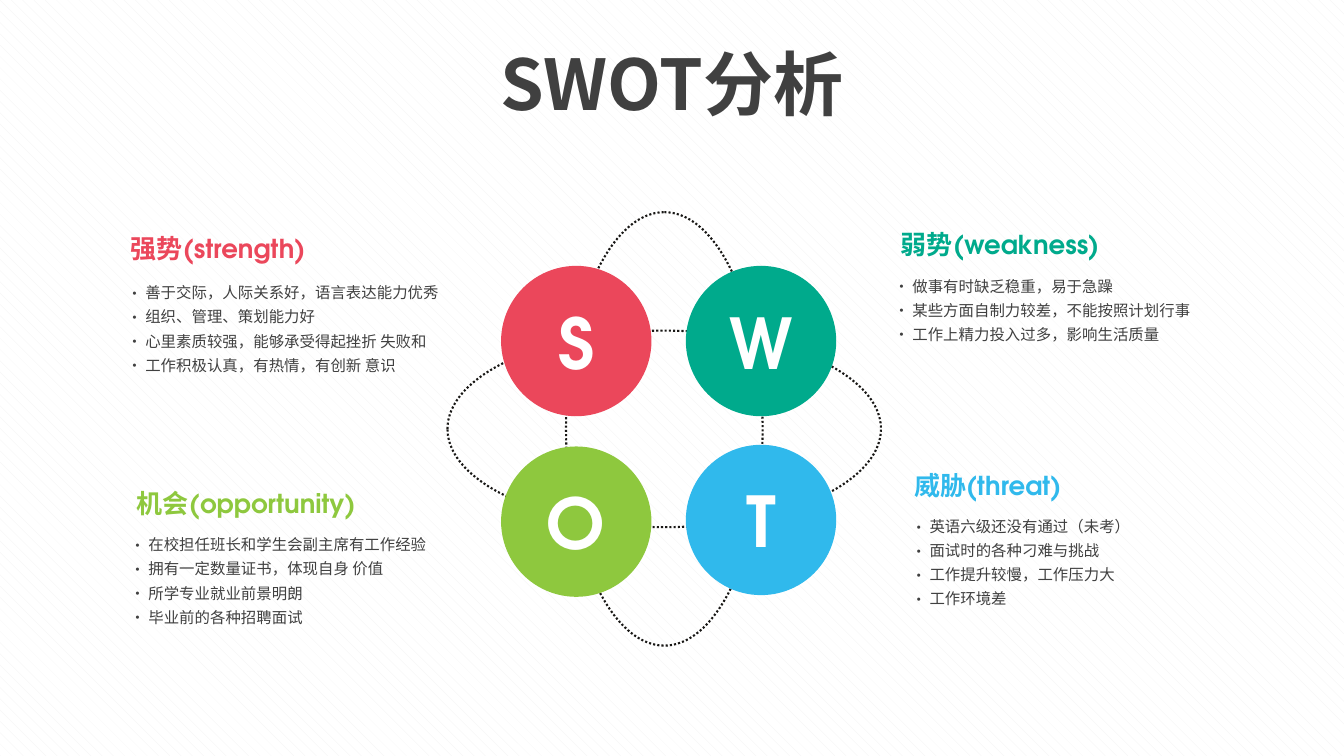
from dataclasses import dataclass

from lxml.etree import SubElement
from pptx import Presentation
from pptx.dml.color import RGBColor as RGB
from pptx.enum.dml import MSO_LINE_DASH_STYLE as Dash, MSO_PATTERN_TYPE as Pattern
from pptx.enum.shapes import MSO_SHAPE as Shape
from pptx.enum.text import MSO_ANCHOR as Anchor, PP_ALIGN as Align
from pptx.oxml.ns import qn
from pptx.util import Emu, Inches, Pt


@dataclass(frozen=True)
class Theme:
    latin: str = "TeX Gyre Adventor"
    cjk: str = "Noto Sans CJK SC"
    text: str = "404040"
    white: str = "FFFFFF"
    stripe: str = "F2F2F2"
    ring: str = "181715"
    red: str = "EB475B"
    teal: str = "00AA8C"
    green: str = "8EC83E"
    blue: str = "30B9EC"
    display: float = 50
    heading: float = 18.6
    body: float = 11
    ring_line: float = 1.5


@dataclass(frozen=True)
class Box:
    col: float
    row: float
    cols: float
    rows: float


@dataclass(frozen=True)
class Quadrant:
    letter: str
    color: str
    center: tuple[float, float]
    title: str
    title_box: Box
    items: tuple[str, ...]
    list_box: Box


T = Theme()
WIDTH, HEIGHT = Inches(13.333), Inches(7.5)
COLS, ROWS = 80, 45
DISC = 8.95
BULLET_INDENT = 1.1
TITLE_BOX = Box(20.64, 2.1, 38.7, 5.64)
RING_CENTER = (39.54, 25.53)
RING_COLS, RING_ROWS = 25.8, 11.7

QUADRANTS = (
    Quadrant("S", T.red, (34.3, 20.3), "强势(strength)", Box(7.2, 13.56, 14.22, 2.52),
             ("善于交际，人际关系好，语言表达能力优秀", "组织、管理、策划能力好",
              "心里素质较强，能够承受得起挫折 失败和", "工作积极认真，有热情，有创新 意识"),
             Box(6.96, 16.26, 20.52, 6.36)),
    Quadrant("W", T.teal, (45.3, 20.3), "弱势(weakness)", Box(53.04, 13.32, 13.56, 2.52),
             ("做事有时缺乏稳重，易于急躁", "某些方面自制力较差，不能按照计划行事",
              "工作上精力投入过多，影响生活质量"),
             Box(52.62, 15.84, 19.08, 4.92)),
    Quadrant("O", T.green, (34.3, 31.05), "机会(opportunity)", Box(7.56, 28.74, 14.7, 2.52),
             ("在校担任班长和学生会副主席有工作经验", "拥有一定数量证书，体现自身 价值",
              "所学专业就业前景明朗", "毕业前的各种招聘面试"),
             Box(7.14, 31.26, 22.68, 6.36)),
    Quadrant("T", T.blue, (45.3, 30.95), "威胁(threat)", Box(53.82, 27.66, 10.44, 2.52),
             ("英语六级还没有通过（未考）", "面试时的各种刁难与挑战",
              "工作提升较慢，工作压力大", "工作环境差"),
             Box(53.64, 30.18, 18.78, 6.36)),
)


def x(cols: float) -> Emu:
    return Emu(round(WIDTH * cols / COLS))


def y(rows: float) -> Emu:
    return Emu(round(HEIGHT * rows / ROWS))


def place(b: Box) -> tuple[Emu, Emu, Emu, Emu]:
    return x(b.col), y(b.row), x(b.cols), y(b.rows)


def centered(center: tuple[float, float], cols: float, rows: float) -> Box:
    return Box(center[0] - cols / 2, center[1] - rows / 2, cols, rows)


def write(tf, *lines: str, size: float, color: str, font: str, bold: bool = False,
          align: Align = Align.LEFT, spacing: float = 1.0, bullets: bool = False) -> None:
    tf.word_wrap = True
    for i, line in enumerate(lines):
        p = tf.add_paragraph() if i else tf.paragraphs[0]
        p.alignment, p.line_spacing = align, spacing
        if bullets:
            pPr = p._p.get_or_add_pPr()
            pPr.set("marL", str(x(BULLET_INDENT)))
            pPr.set("indent", str(-x(BULLET_INDENT)))
            SubElement(pPr, qn("a:buFont"), typeface=font)
            SubElement(pPr, qn("a:buChar"), char="•")
        r = p.add_run()
        r.text = line
        r.font.name, r.font.size, r.font.bold = font, Pt(size), bold
        r.font.color.rgb = RGB.from_string(color)
        SubElement(r._r.get_or_add_rPr(), qn("a:ea"), typeface=T.cjk)


def add_text(s, b: Box, *lines: str, **style) -> None:
    write(s.shapes.add_textbox(*place(b)).text_frame, *lines, **style)


def add_ellipse(s, b: Box):
    sp = s.shapes.add_shape(Shape.OVAL, *place(b))
    sp.shadow.inherit = False
    return sp


def add_ring(s, rotation: float) -> None:
    sp = add_ellipse(s, centered(RING_CENTER, RING_COLS, RING_ROWS))
    sp.rotation = rotation
    sp.fill.background()
    sp.line.color.rgb = RGB.from_string(T.ring)
    sp.line.width = Pt(T.ring_line)
    sp.line.dash_style = Dash.ROUND_DOT


def add_disc(s, q: Quadrant) -> None:
    sp = add_ellipse(s, centered(q.center, DISC, DISC))
    sp.fill.solid()
    sp.fill.fore_color.rgb = RGB.from_string(q.color)
    sp.line.fill.background()
    sp.text_frame.vertical_anchor = Anchor.MIDDLE
    write(sp.text_frame, q.letter, size=T.display, color=T.white, font=T.latin,
          bold=True, align=Align.CENTER)


def add_notes_block(s, q: Quadrant) -> None:
    add_text(s, q.title_box, q.title, size=T.heading, color=q.color, font=T.latin, bold=True)
    add_text(s, q.list_box, *q.items, size=T.body, color=T.text, font=T.cjk,
             spacing=1.3, bullets=True)


def paint_background(s) -> None:
    fill = s.background.fill
    fill.patterned()
    fill.pattern = Pattern.SHINGLE
    fill.fore_color.rgb = RGB.from_string(T.stripe)
    fill.back_color.rgb = RGB.from_string(T.white)


def main() -> None:
    prs = Presentation()
    prs.slide_width, prs.slide_height = WIDTH, HEIGHT
    s = prs.slides.add_slide(prs.slide_layouts[6])
    paint_background(s)
    add_text(s, TITLE_BOX, "SWOT分析", size=T.display, color=T.text, font=T.cjk,
             bold=True, align=Align.CENTER)
    for q in QUADRANTS:
        add_notes_block(s, q)
    for rotation in (0, 90):
        add_ring(s, rotation)
    for q in QUADRANTS:
        add_disc(s, q)
    prs.save("out.pptx")


if __name__ == "__main__":
    main()
